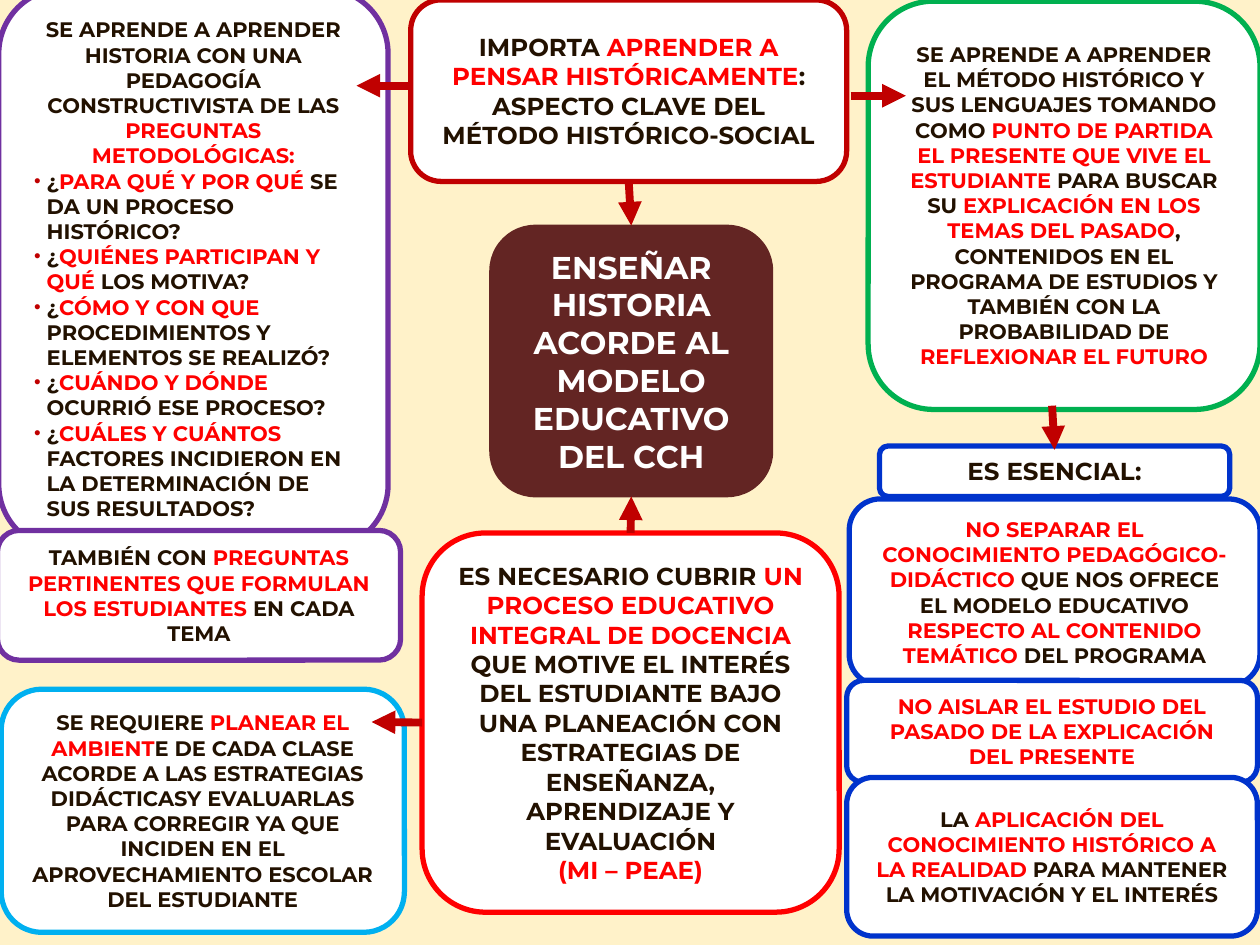
"""Build a one-slide concept map on teaching history under an educational model."""
from dataclasses import dataclass

from lxml.etree import SubElement
from pptx import Presentation
from pptx.dml.color import RGBColor
from pptx.enum.shapes import MSO_CONNECTOR as Connector, MSO_SHAPE as Preset
from pptx.enum.text import MSO_ANCHOR as Anchor, MSO_AUTO_SIZE as AutoSize, PP_ALIGN as Align
from pptx.oxml.ns import qn
from pptx.shapes.autoshape import Shape
from pptx.slide import Slide
from pptx.util import Emu, Pt

EMU_PER_PX = 9144
FONT = "Montserrat"
CREAM = RGBColor(0xFF, 0xF2, 0xC9)
WHITE = RGBColor(0xFF, 0xFF, 0xFF)
INK = RGBColor(0x22, 0x11, 0x00)
RED = RGBColor(0xFF, 0x00, 0x00)
CRIMSON = RGBColor(0xC0, 0x00, 0x00)
MAROON = RGBColor(0x63, 0x25, 0x23)
PURPLE = RGBColor(0x70, 0x30, 0xA0)
GREEN = RGBColor(0x00, 0xB0, 0x50)
BLUE = RGBColor(0x00, 0x33, 0xCC)
SKY = RGBColor(0x00, 0xB0, 0xF0)
TOP, LEFT, BOTTOM = 0, 1, 2


@dataclass(frozen=True)
class Card:
    """A rounded card; text between bars is shown in the accent colour."""
    name: str
    box: tuple[int, int, int, int]
    border: RGBColor
    lines: tuple[str, ...]
    questions: tuple[str, ...] = ()
    size: int = 12
    fill: RGBColor = WHITE
    ink: RGBColor = INK
    border_width: int = 3


@dataclass(frozen=True)
class Arrow:
    """An arrow, optionally joined to (card name, side) at either end."""
    start: tuple[int, int]
    end: tuple[int, int]
    source: tuple[str, int] | None = None
    target: tuple[str, int] | None = None


CARDS = (
    Card("process", (335, 423, 331, 301), RED, (
        "ES NECESARIO CUBRIR |UN PROCESO EDUCATIVO INTEGRAL DE DOCENCIA |QUE MOTIVE EL INTERÉS "
        "DEL ESTUDIANTE BAJO UNA PLANEACIÓN CON ESTRATEGIAS DE ENSEÑANZA, APRENDIZAJE Y EVALUACIÓN",
        "|(MI – PEAE)|"), size=14),
    Card("thinking", (326, 0, 346, 144), CRIMSON, (
        "IMPORTA |APRENDER A PENSAR HISTÓRICAMENTE|: ASPECTO CLAVE DEL MÉTODO HISTÓRICO-SOCIAL",),
        size=14),
    Card("core", (389, 179, 224, 215), MAROON, (
        "ENSEÑAR HISTORIA ACORDE AL MODELO EDUCATIVO DEL CCH",),
        size=18, fill=MAROON, ink=WHITE, border_width=1),
    Card("pedagogy", (-1, -9, 309, 445), PURPLE, (
        "SE APRENDE A APRENDER HISTORIA CON UNA PEDAGOGÍA CONSTRUCTIVISTA DE LAS "
        "|PREGUNTAS METODOLÓGICAS:|",), questions=(
        "¿|PARA QUÉ Y POR QUÉ| SE DA UN PROCESO HISTÓRICO?",
        "¿|QUIÉNES PARTICIPAN Y QUÉ| LOS MOTIVA?",
        "¿|CÓMO Y CON QUE |PROCEDIMIENTOS Y ELEMENTOS SE REALIZÓ?",
        "¿|CUÁNDO Y DÓNDE |OCURRIÓ ESE PROCESO?",
        "¿|CUÁLES Y CUÁNTOS |FACTORES INCIDIERON EN LA DETERMINACIÓN DE SUS RESULTADOS?")),
    Card("method", (689, 1, 311, 324), GREEN, (
        "SE APRENDE A APRENDER EL MÉTODO HISTÓRICO Y SUS LENGUAJES TOMANDO COMO "
        "|PUNTO DE PARTIDA EL PRESENTE QUE VIVE EL ESTUDIANTE |PARA BUSCAR SU "
        "|EXPLICACIÓN EN LOS TEMAS DEL PASADO|, CONTENIDOS EN EL PROGRAMA DE ESTUDIOS "
        "Y TAMBIÉN CON LA PROBABILIDAD DE |REFLEXIONAR EL FUTURO|",)),
    Card("essential", (698, 354, 278, 40), BLUE, ("ES ESENCIAL:",), size=14),
    Card("planning", (1, 547, 320, 193), SKY, (
        "SE REQUIERE |PLANEAR EL AMBIENT|E DE CADA CLASE ACORDE A LAS ESTRATEGIAS DIDÁCTICASY "
        "EVALUARLAS PARA CORREGIR YA QUE INCIDEN EN EL APROVECHAMIENTO ESCOLAR DEL ESTUDIANTE",)),
    Card("integration", (674, 396, 326, 148), BLUE, (
        "|NO SEPARAR EL CONOCIMIENTO PEDAGÓGICO-DIDÁCTICO| QUE NOS OFRECE EL MODELO EDUCATIVO "
        "|RESPECTO AL CONTENIDO TEMÁTICO| DEL PROGRAMA",)),
    Card("present", (672, 540, 326, 81), BLUE, (
        "|NO AISLAR EL ESTUDIO DEL PASADO DE LA EXPLICACIÓN DEL PRESENTE|",)),
    Card("application", (672, 617, 326, 126), BLUE, (
        "LA |APLICACIÓN DEL CONOCIMIENTO HISTÓRICO A LA REALIDAD| PARA MANTENER "
        "LA MOTIVACIÓN Y EL INTERÉS",)),
    Card("students", (-2, 421, 320, 103), PURPLE, (
        "TAMBIÉN CON |PREGUNTAS PERTINENTES QUE FORMULAN LOS ESTUDIANTES| EN CADA TEMA",)),
)

ARROWS = (
    Arrow((499, 144), (501, 179), ("thinking", BOTTOM), ("core", TOP)),
    Arrow((501, 423), (501, 394), ("process", TOP), ("core", BOTTOM)),
    Arrow((835, 322), (837, 357)),
    Arrow((675, 76), (719, 76)),
    Arrow((324, 68), (283, 68)),
    Arrow((335, 573), (295, 573), ("process", LEFT)),
)


def px(length: int) -> Emu:
    """Convert px to EMU."""
    return Emu(length * EMU_PER_PX)


def add_bullet(paragraph) -> None:
    """Give a paragraph a hanging crimson bullet."""
    properties = paragraph._p.get_or_add_pPr()
    properties.set("marL", str(px(10)))
    properties.set("indent", str(px(-10)))
    bullet_color = SubElement(properties, qn("a:buClr"))
    SubElement(bullet_color, qn("a:srgbClr"), val=str(CRIMSON))
    SubElement(properties, qn("a:buSzPct"), val="90000")
    SubElement(properties, qn("a:buFont"), typeface="Arial")
    SubElement(properties, qn("a:buChar"), char="•")


def draw_card(slide: Slide, card: Card) -> Shape:
    """Draw a card with its statement and any bulleted questions."""
    shape = slide.shapes.add_shape(Preset.ROUNDED_RECTANGLE, *map(px, card.box))
    shape.shadow.inherit = False
    shape.fill.solid()
    shape.fill.fore_color.rgb = card.fill
    shape.line.color.rgb = card.border
    shape.line.width = Pt(card.border_width)
    frame = shape.text_frame
    frame.word_wrap = True
    frame.auto_size = AutoSize.SHAPE_TO_FIT_TEXT
    frame.vertical_anchor = Anchor.MIDDLE
    frame.margin_left = frame.margin_right = px(13)
    frame.margin_top = frame.margin_bottom = px(6)
    for index, line in enumerate(card.lines + card.questions):
        paragraph = frame.add_paragraph() if index else frame.paragraphs[0]
        is_question = index >= len(card.lines)
        paragraph.alignment = Align.LEFT if is_question else Align.CENTER
        if is_question:
            add_bullet(paragraph)
        paragraph.font.name = FONT
        paragraph.font.size = Pt(card.size)
        paragraph.font.bold = True
        for position, words in enumerate(line.split("|")):
            if words:
                run = paragraph.add_run()
                run.text = words
                run.font.color.rgb = RED if position % 2 else card.ink
    return shape


def draw_arrow(slide: Slide, arrow: Arrow, cards: dict[str, Shape]) -> None:
    """Draw a crimson arrow and join it to its cards."""
    connector = slide.shapes.add_connector(
        Connector.STRAIGHT, *map(px, arrow.start + arrow.end))
    if arrow.source:
        name, side = arrow.source
        connector.begin_connect(cards[name], side)
    if arrow.target:
        name, side = arrow.target
        connector.end_connect(cards[name], side)
    connector.line.color.rgb = CRIMSON
    connector.line.width = Pt(4.5)
    SubElement(connector.line._get_or_add_ln(), qn("a:tailEnd"), type="triangle")
    SubElement(connector._element.spPr, qn("a:effectLst"))


def main() -> None:
    """Build and save the slide."""
    deck = Presentation()
    deck.slide_width, deck.slide_height = px(1000), px(750)
    slide = deck.slides.add_slide(deck.slide_layouts[6])
    slide.background.fill.solid()
    slide.background.fill.fore_color.rgb = CREAM
    cards = {card.name: draw_card(slide, card) for card in CARDS}
    for arrow in ARROWS:
        draw_arrow(slide, arrow, cards)
    deck.save("out.pptx")


if __name__ == "__main__":
    main()
